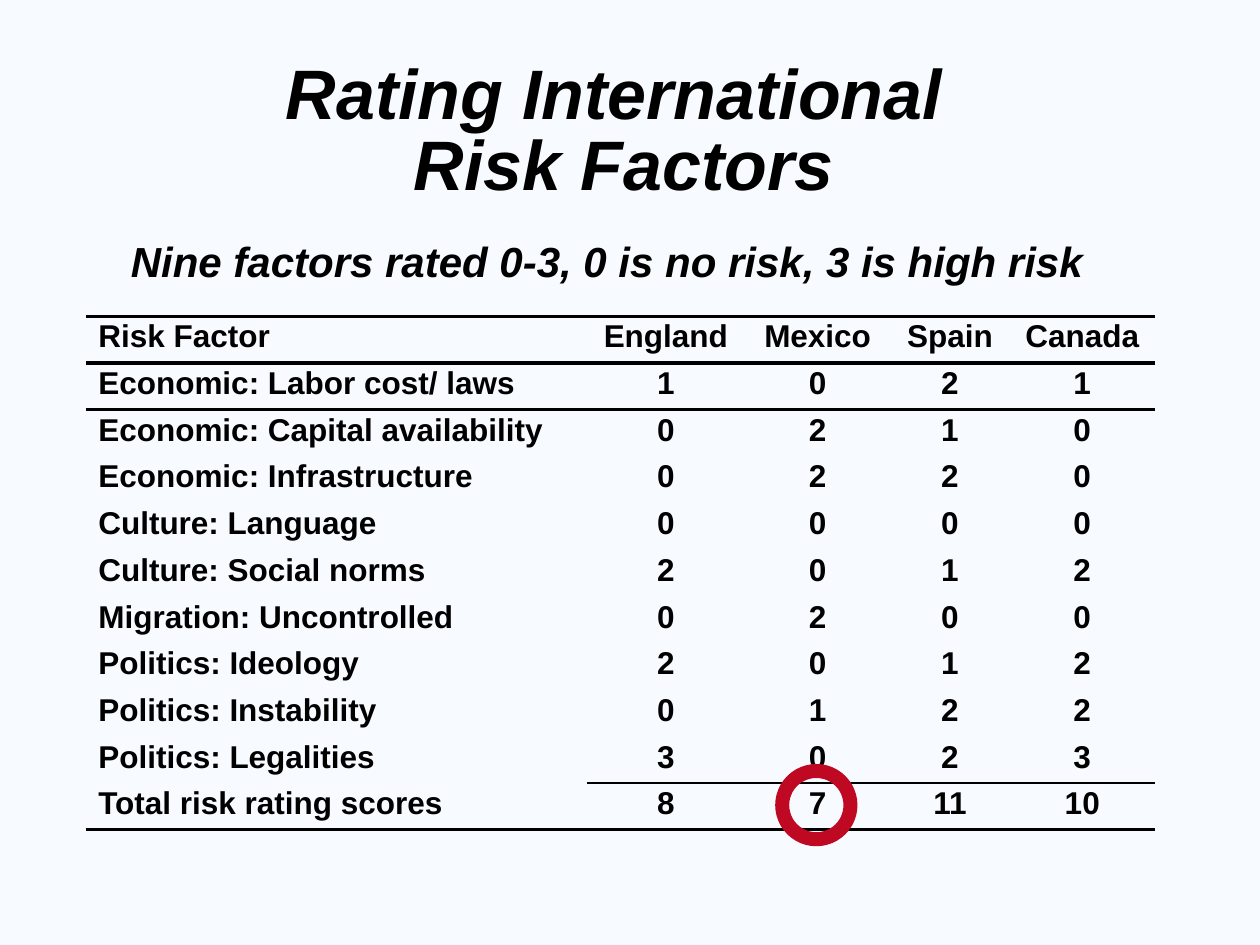
from lxml import etree
from pptx import Presentation
from pptx.dml.color import RGBColor
from pptx.enum import shapes, text
from pptx.oxml import ns
from pptx.util import Pt

BACKGROUND = RGBColor(0xF7, 0xFB, 0xFF)
BLACK = RGBColor(0, 0, 0)
RED = RGBColor(0xBF, 0x09, 0x22)
FONT = "Arial"
NO_STYLE_NO_GRID = "{2D5ABB26-0587-4C30-8999-92F81FD0307C}"
HEAVY_RULE, LIGHT_RULE = 2.25, 1.5

COLUMN_WIDTHS = (286.5, 90, 83.5, 67.7, 83.5)
ROW_HEIGHT = 26.64
RATINGS = [
    ("Risk Factor", "England", "Mexico", "Spain", "Canada"),
    ("Economic: Labor cost/ laws", 1, 0, 2, 1),
    ("Economic: Capital availability", 0, 2, 1, 0),
    ("Economic: Infrastructure", 0, 2, 2, 0),
    ("Culture: Language", 0, 0, 0, 0),
    ("Culture: Social norms", 2, 0, 1, 2),
    ("Migration: Uncontrolled", 0, 2, 0, 0),
    ("Politics: Ideology", 2, 0, 1, 2),
    ("Politics: Instability", 0, 1, 2, 2),
    ("Politics: Legalities", 3, 0, 2, 3),
    ("Total risk rating scores", 8, 7, 11, 10),
]


def format_paragraph(paragraph, size, align, line_spacing=0.9, italic=False):
    paragraph.alignment = align
    paragraph.line_spacing = line_spacing
    font = paragraph.font
    font.name, font.size, font.bold, font.italic = FONT, Pt(size), True, italic
    font.color.rgb = BLACK


def add_title(slide, left, top, width, height):
    title = slide.shapes.title
    title.left, title.top, title.width, title.height = map(Pt, (left, top, width, height))
    frame = title.text_frame
    frame.text = "Rating International \vRisk Factors"
    frame.vertical_anchor = text.MSO_ANCHOR.MIDDLE
    format_paragraph(frame.paragraphs[0], 40, text.PP_ALIGN.CENTER, 0.85, italic=True)


def add_scale_note(slide, left, top, width, height):
    note = slide.shapes.add_textbox(*map(Pt, (left, top, width, height)))
    frame = note.text_frame
    frame.word_wrap = True
    frame.text = "Nine factors rated 0-3, 0 is no risk, 3 is high risk"
    format_paragraph(frame.paragraphs[0], 24, text.PP_ALIGN.LEFT, italic=True)


def rule_cell(cell, top, bottom):
    """Draw the cell's top and bottom borders; a width of 0 leaves one out."""
    properties = cell._tc.get_or_add_tcPr()
    # Borders come before the fill, top first.
    for tag, width in (("a:lnB", bottom), ("a:lnT", top)):
        if width:
            line = etree.Element(ns.qn(tag), w=str(Pt(width)))
            fill = etree.SubElement(line, ns.qn("a:solidFill"))
            etree.SubElement(fill, ns.qn("a:srgbClr"), val=str(BLACK))
            properties.insert(0, line)


def rule_below(row, column):
    """Width of the rule under a cell; row -1 stands for the table's top edge."""
    last = len(RATINGS) - 1
    if row in (-1, 0, last):
        return HEAVY_RULE
    return LIGHT_RULE if row == last - 1 and column > 0 else 0


def add_ratings_table(slide, left, top):
    frame = slide.shapes.add_table(
        len(RATINGS), len(COLUMN_WIDTHS), Pt(left), Pt(top),
        Pt(sum(COLUMN_WIDTHS)), Pt(ROW_HEIGHT * len(RATINGS)))
    table = frame.table
    table.first_row = table.horz_banding = False
    table._tbl.tblPr.find(ns.qn("a:tableStyleId")).text = NO_STYLE_NO_GRID
    for column, width in zip(table.columns, COLUMN_WIDTHS):
        column.width = Pt(width)
    for r, values in enumerate(RATINGS):
        table.rows[r].height = Pt(ROW_HEIGHT)
        for c, value in enumerate(values):
            cell = table.cell(r, c)
            cell.text = str(value)
            cell.fill.background()
            align = text.PP_ALIGN.CENTER if c else text.PP_ALIGN.LEFT
            format_paragraph(cell.text_frame.paragraphs[0], 18, align)
            rule_cell(cell, rule_below(r - 1, c), rule_below(r, c))


def add_lowest_score_ring(slide, left, top, diameter):
    ring = slide.shapes.add_shape(
        shapes.MSO_SHAPE.OVAL, Pt(left), Pt(top), Pt(diameter), Pt(diameter))
    ring.shadow.inherit = False
    ring.fill.background()
    ring.line.color.rgb = RED
    ring.line.width = Pt(8)


def main():
    presentation = Presentation()
    presentation.slide_width, presentation.slide_height = Pt(720), Pt(540)
    slide = presentation.slides.add_slide(presentation.slide_layouts[5])
    slide.background.fill.solid()
    slide.background.fill.fore_color.rgb = BACKGROUND
    add_title(slide, 50.4, 28.8, 612, 95)
    add_scale_note(slide, 67.7, 134.6, 578, 33)
    add_ratings_table(slide, 49, 180.7)
    add_lowest_score_ring(slide, 447, 440.6, 39)
    presentation.save("out.pptx")


if __name__ == "__main__":
    main()
